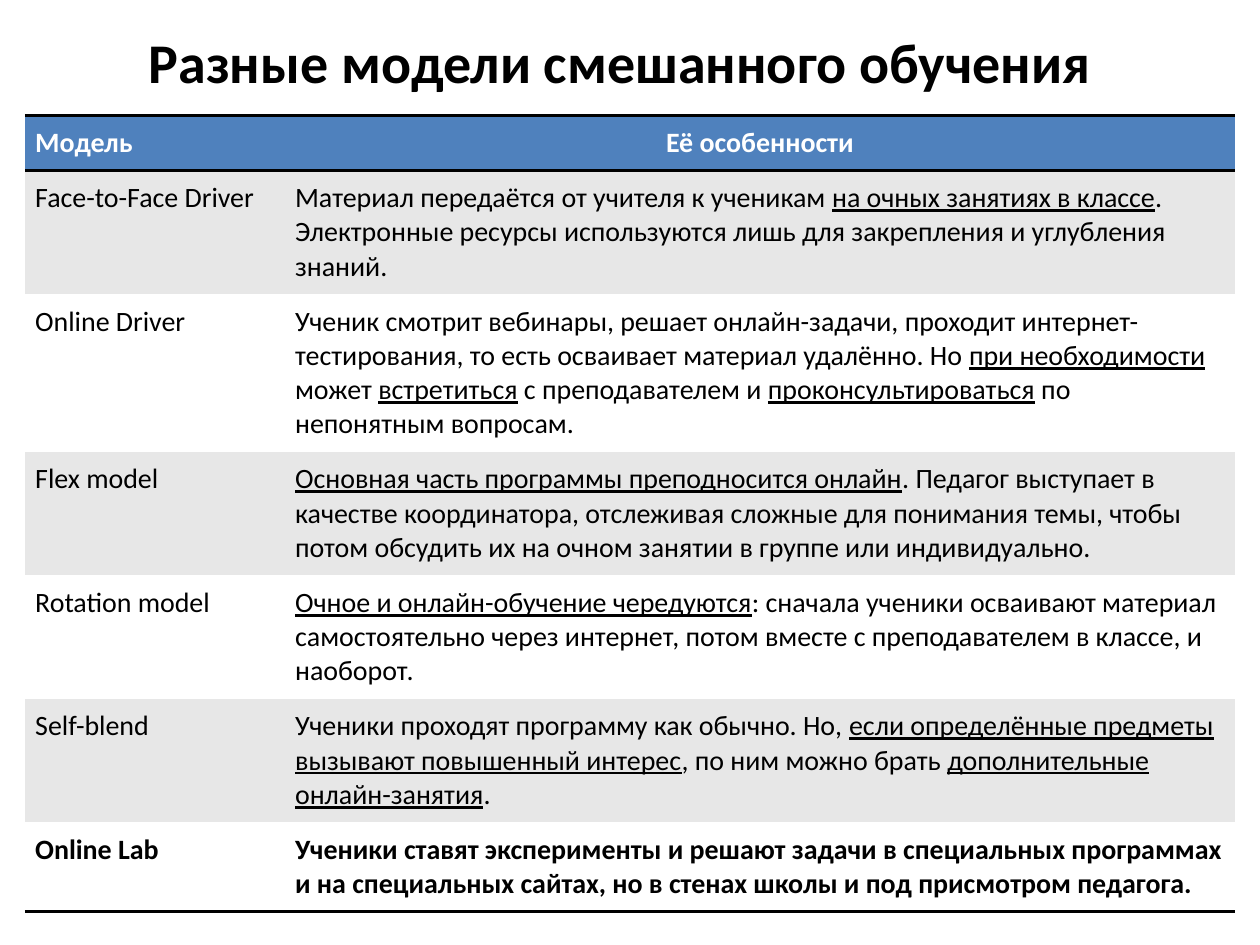
"""Build a slide with a table comparing blended learning models."""
from lxml import etree
from pptx import Presentation
from pptx.dml.color import RGBColor
from pptx.enum.text import MSO_ANCHOR, PP_ALIGN
from pptx.oxml.ns import qn
from pptx.util import Cm, Pt

CENTER = PP_ALIGN.CENTER
MIDDLE = MSO_ANCHOR.MIDDLE
BLACK = RGBColor(0x00, 0x00, 0x00)
WHITE = RGBColor(0xFF, 0xFF, 0xFF)
BLUE = RGBColor(0x4F, 0x81, 0xBD)
GRAY = RGBColor(0xE7, 0xE7, 0xE7)
FONT = "Calibri"
UNDERLINE_MARK = "_"

TITLE = "Разные модели смешанного обучения"
MODELS = [
    ("Модель", "Её особенности"),
    ("Face-to-Face Driver",
     "Материал передаётся от учителя к ученикам _на очных занятиях в классе_. "
     "Электронные ресурсы используются лишь для закрепления и углубления знаний."),
    ("Online Driver",
     "Ученик смотрит вебинары, решает онлайн-задачи, проходит интернет-тестирования, "
     "то есть осваивает материал удалённо. Но _при необходимости _может _встретиться_ "
     "с преподавателем и _проконсультироваться_ по непонятным вопросам."),
    ("Flex model",
     "_Основная часть программы преподносится онлайн_. Педагог выступает в качестве "
     "координатора, отслеживая сложные для понимания темы, чтобы потом обсудить их "
     "на очном занятии в группе или индивидуально."),
    ("Rotation model",
     "_Очное и онлайн-обучение чередуются_: сначала ученики осваивают материал "
     "самостоятельно через интернет, потом вместе с преподавателем в классе, и наоборот."),
    ("Self-blend",
     "Ученики проходят программу как обычно. Но, _если определённые предметы вызывают "
     "повышенный интерес_, по ним можно брать _дополнительные онлайн-занятия_."),
    ("Online Lab",
     "Ученики ставят эксперименты и решают задачи в специальных программах и на "
     "специальных сайтах, но в стенах школы и под присмотром педагога."),
]
LINE_COUNTS = [1, 3, 4, 3, 3, 3, 2]
LAST = len(MODELS) - 1
RULED_EDGES = {0, 1, len(MODELS)}
COLUMN_WIDTHS = [Cm(5.24), Cm(19.16)]
LINE_HEIGHT = Cm(0.69)
CELL_MARGIN = Cm(0.21)
ROW_HEIGHTS = [count * LINE_HEIGHT + 2 * CELL_MARGIN for count in LINE_COUNTS]


def style_run(run, size, color, bold):
    run.font.name = FONT
    run.font.size = Pt(size)
    run.font.color.rgb = color
    run.font.bold = bold


def set_borders(cell, row):
    ruled = {"a:lnL": False, "a:lnR": False,
             "a:lnT": row in RULED_EDGES, "a:lnB": row + 1 in RULED_EDGES}
    properties = cell._tc.get_or_add_tcPr()
    for tag, visible in ruled.items():
        border = etree.SubElement(properties, qn(tag), w=str(Pt(2) if visible else 0))
        if visible:
            fill = etree.SubElement(border, qn("a:solidFill"))
            etree.SubElement(fill, qn("a:srgbClr"), val=str(BLACK))
        else:
            etree.SubElement(border, qn("a:noFill"))


def fill_cell(cell, row, column, text):
    header = row == 0
    cell.margin_left = cell.margin_right = CELL_MARGIN
    cell.margin_top = cell.margin_bottom = CELL_MARGIN
    set_borders(cell, row)
    cell.fill.solid()
    cell.fill.fore_color.rgb = BLUE if header else GRAY if row % 2 else WHITE
    paragraph = cell.text_frame.paragraphs[0]
    if header and column == 1:
        paragraph.alignment = CENTER
    for index, part in enumerate(text.split(UNDERLINE_MARK)):
        if part:
            run = paragraph.add_run()
            run.text = part
            style_run(run, 16, WHITE if header else BLACK, row in (0, LAST))
            run.font.underline = index % 2 == 1


def add_title(slide):
    title = slide.shapes.add_textbox(Cm(0.5), Cm(0.33), Cm(24), Cm(1.8))
    frame = title.text_frame
    frame.word_wrap = True
    frame.vertical_anchor = MIDDLE
    frame.text = TITLE
    paragraph = frame.paragraphs[0]
    paragraph.alignment = CENTER
    style_run(paragraph.runs[0], 32, BLACK, True)


def add_models(slide):
    table = slide.shapes.add_table(len(MODELS), len(COLUMN_WIDTHS), Cm(0.5), Cm(2.33),
                                   sum(COLUMN_WIDTHS), sum(ROW_HEIGHTS)).table
    table.horz_banding = False
    for column, width in zip(table.columns, COLUMN_WIDTHS):
        column.width = width
    for row, (texts, height) in enumerate(zip(MODELS, ROW_HEIGHTS)):
        table.rows[row].height = height
        for column, text in enumerate(texts):
            fill_cell(table.cell(row, column), row, column, text)


def main():
    presentation = Presentation()
    presentation.slide_width = Cm(25.4)
    presentation.slide_height = Cm(19.05)
    slide = presentation.slides.add_slide(presentation.slide_layouts[6])
    add_title(slide)
    add_models(slide)
    presentation.save("out.pptx")


if __name__ == "__main__":
    main()
